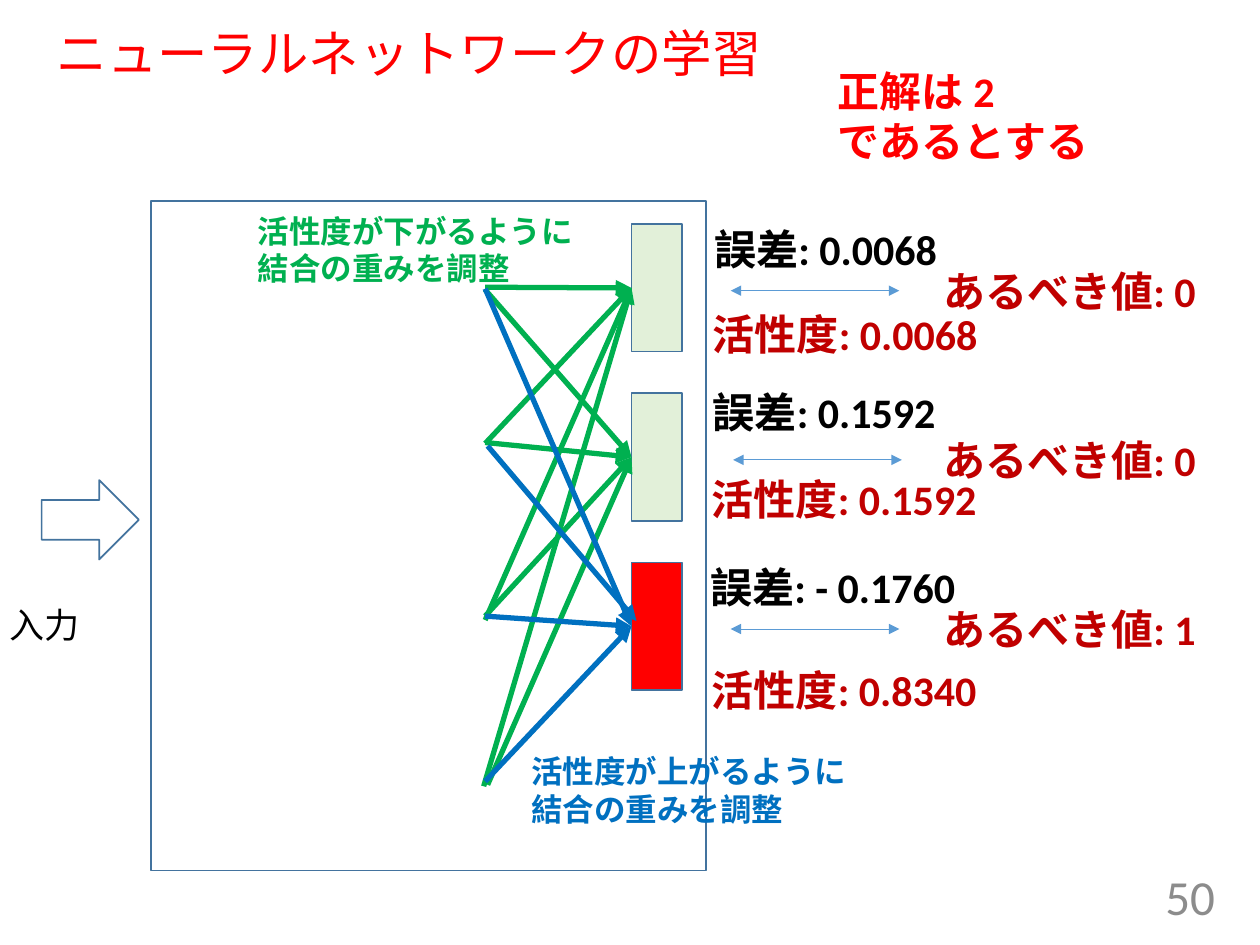
from lxml.etree import SubElement
from pptx import Presentation
from pptx.dml.color import RGBColor
from pptx.enum.shapes import MSO_CONNECTOR, MSO_SHAPE
from pptx.enum.text import MSO_ANCHOR, PP_ALIGN
from pptx.oxml.ns import qn
from pptx.util import Cm, Pt

COLOURS = {
    "red": "FF0000", "dark red": "C00000", "green": "00B050", "blue": "0070C0",
    "black": "000000", "grey": "8C8C8C", "pale green": "E2F0D9",
    "outline": "43739E", "arrow": "5B9BD5",
}
FONT = "Calibri"
TITLE = "ニューラルネットワークの学習"

OUTPUTS = [
    {"error": ("誤差: 0.0068", 14.15, 4.39), "activity": ("活性度: 0.0068", 14.12, 6.1),
     "target": "あるべき値: 0", "fill": "pale green", "line": "green", "arrow left": 14.73,
     "sources": [(9.78, 5.79), (9.78, 8.94), (9.78, 12.5), (9.75, 15.85)]},
    {"error": ("誤差: 0.1592", 14.12, 7.67), "activity": ("活性度: 0.1592", 14.1, 9.42),
     "target": "あるべき値: 0", "fill": "pale green", "line": "green", "arrow left": 14.78,
     "sources": [(9.78, 5.84), (9.78, 8.92), (9.78, 12.42), (9.83, 15.82)]},
    {"error": ("誤差: - 0.1760", 14.07, 11.2), "activity": ("活性度: 0.8340", 14.1, 13.28),
     "target": "あるべき値: 1", "fill": "red", "line": "blue", "arrow left": 14.73,
     "sources": [(9.78, 5.82), (9.78, 12.42), (9.78, 15.75)]},
]
OFFSET_LINE = ((9.83, 8.99), (12.83, 12.52))

NOTES = [
    (["正解は 2", "であるとする"], (16.64, 1.19, 6.22, 3.33), 24, "red", True, True),
    (["入力"], (-0.05, 12.04, 1.93, 1.12), 20, "black", False, False),
    (["活性度が下がるように", "結合の重みを調整"], (4.95, 4.14, 6.93, 1.8), 18, "green", True, False),
    (["活性度が上がるように", "結合の重みを調整"], (10.46, 15.04, 6.93, 1.8), 18, "blue", True, False),
]

UNIT_LEFT, UNIT_TOP, UNIT_PITCH = 12.73, 4.52, 3.41
UNIT_WIDTH, UNIT_HEIGHT = 1.02, 2.57
ARROW_LENGTH = 3.4


def colour(name):
    return RGBColor.from_string(COLOURS[name])


def style_paragraph(paragraph, size, colour_name, bold=False):
    paragraph.font.name = FONT
    paragraph.font.size = Pt(size)
    paragraph.font.bold = bold
    paragraph.font.color.rgb = colour(colour_name)


def add_text(slide, lines, box, size, colour_name, bold=True, wrap=True):
    shape = slide.shapes.add_textbox(*map(Cm, box))
    frame = shape.text_frame
    frame.word_wrap = wrap
    frame.text = "\n".join(lines)
    for paragraph in frame.paragraphs:
        style_paragraph(paragraph, size, colour_name, bold)
    return frame


def add_block(slide, kind, box, fill=None):
    shape = slide.shapes.add_shape(kind, *map(Cm, box))
    shape.shadow.inherit = False
    if fill:
        shape.fill.solid()
        shape.fill.fore_color.rgb = colour(fill)
    else:
        shape.fill.background()
    shape.line.color.rgb = colour("outline")
    shape.line.width = Pt(1)
    return shape


def add_arrow(slide, start, end, colour_name, width, ends=("tailEnd",)):
    connector = slide.shapes.add_connector(MSO_CONNECTOR.STRAIGHT, *map(Cm, start + end))
    connector.line.color.rgb = colour(colour_name)
    connector.line.width = Pt(width)
    properties = connector.element.spPr
    line = properties.find(qn("a:ln"))
    for end_name in ends:
        SubElement(line, qn(f"a:{end_name}"), type="triangle")
    SubElement(properties, qn("a:effectLst"))
    return connector


def add_output(slide, output, top):
    text, left, text_top = output["activity"]
    add_text(slide, [text], (left, text_top, 7.65, 1.27), 24, "dark red")
    text, left, text_top = output["error"]
    add_text(slide, [text], (left, text_top, 6, 1.27), 24, "black")
    add_text(slide, [output["target"]], (18.77, top + 0.71, 6.6, 1.27), 24, "dark red")
    left, middle = output["arrow left"], top + 1.34
    add_arrow(slide, (left, middle), (left + ARROW_LENGTH, middle), "arrow", 0.5,
              ("headEnd", "tailEnd"))
    unit = add_block(slide, MSO_SHAPE.RECTANGLE, (UNIT_LEFT, top, UNIT_WIDTH, UNIT_HEIGHT),
                     output["fill"])
    for source in output["sources"]:
        connector = add_arrow(slide, source, (UNIT_LEFT, top + UNIT_HEIGHT / 2),
                              output["line"], 3)
        connector.end_connect(unit, 1)


def main():
    presentation = Presentation()
    presentation.slide_width, presentation.slide_height = Cm(25.4), Cm(19.05)
    slide = presentation.slides.add_slide(presentation.slide_layouts[5])

    title = slide.shapes.title
    title.left, title.top, title.width, title.height = map(Cm, (0.89, 0.48, 23.5, 1.3))
    title.text_frame.text = TITLE
    title.text_frame.vertical_anchor = MSO_ANCHOR.MIDDLE
    heading = title.text_frame.paragraphs[0]
    heading.alignment = PP_ALIGN.LEFT
    heading.line_spacing = 0.9
    style_paragraph(heading, 28.8, "red")

    for index, output in enumerate(OUTPUTS):
        add_output(slide, output, UNIT_TOP + index * UNIT_PITCH)
    add_arrow(slide, *OFFSET_LINE, "blue", 3)

    add_block(slide, MSO_SHAPE.RECTANGLE, (3.05, 4.06, 11.18, 13.49))
    add_block(slide, MSO_SHAPE.RIGHT_ARROW, (0.84, 9.68, 1.96, 1.6))
    for note in NOTES:
        add_text(slide, *note)

    number = add_text(slide, ["50"], (19.02, 17.55, 5.72, 1.02), 28, "grey", False)
    number.vertical_anchor = MSO_ANCHOR.MIDDLE
    number.paragraphs[0].alignment = PP_ALIGN.RIGHT

    presentation.save("out.pptx")


if __name__ == "__main__":
    main()
